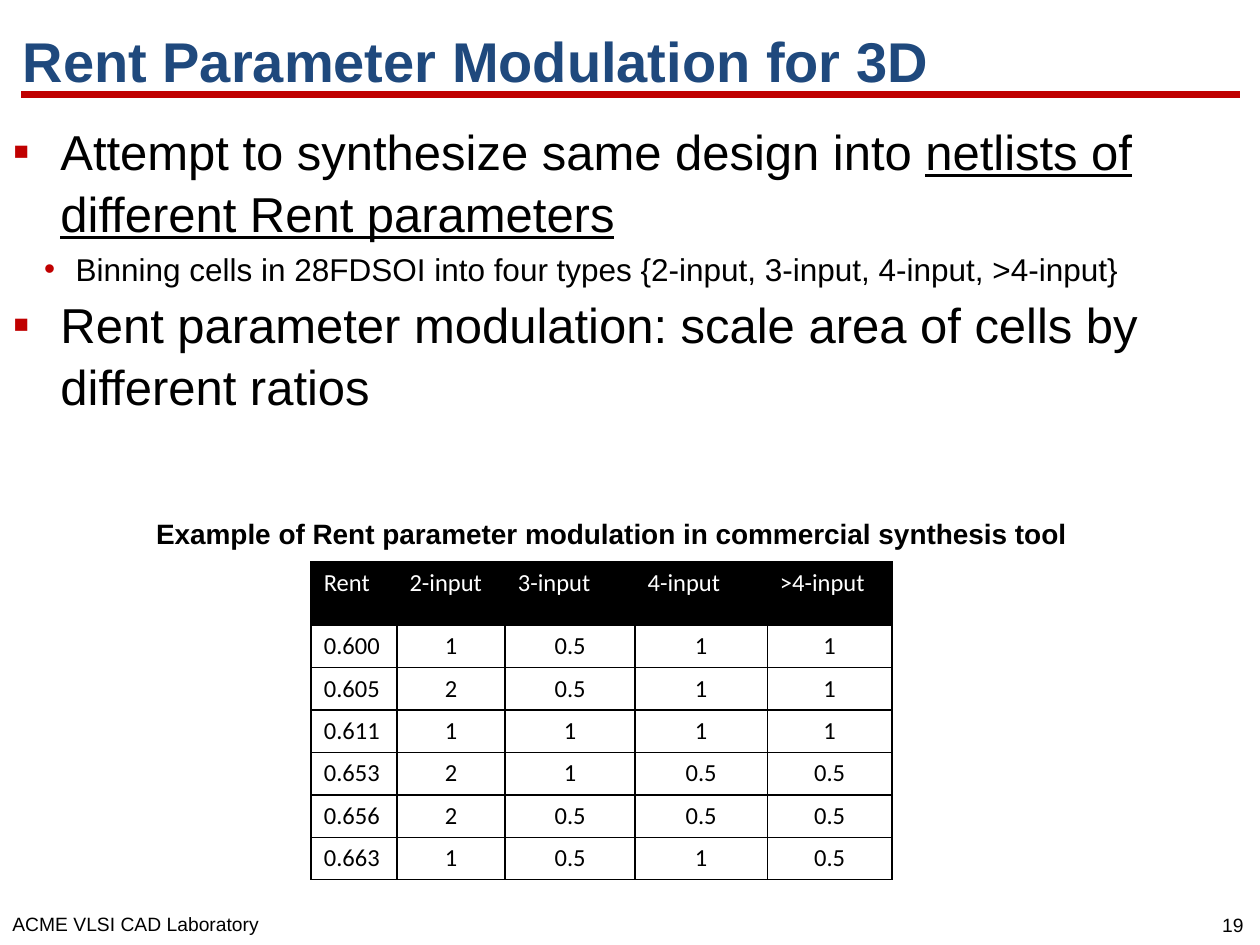
from dataclasses import dataclass

from lxml import etree
from pptx import Presentation
from pptx.dml.color import RGBColor
from pptx.enum.shapes import MSO_CONNECTOR
from pptx.enum.text import MSO_ANCHOR, MSO_AUTO_SIZE, PP_ALIGN
from pptx.oxml.ns import qn
from pptx.util import Inches, Pt

LEFT, CENTER = PP_ALIGN.LEFT, PP_ALIGN.CENTER
MIDDLE, TOP = MSO_ANCHOR.MIDDLE, MSO_ANCHOR.TOP
STRAIGHT = MSO_CONNECTOR.STRAIGHT
NO_FIT = MSO_AUTO_SIZE.NONE


@dataclass(frozen=True)
class Theme:
    font: str = "Arial"
    table_font: str = "Calibri"
    navy: str = "1F497D"
    red: str = "C00000"
    black: str = "000000"
    white: str = "FFFFFF"
    title_size: int = 32
    body_size: int = 28
    detail_size: int = 18
    caption_size: int = 16
    table_size: int = 14
    footer_size: int = 11


THEME = Theme()

# Each bullet: level, then (text, underlined) spans
BULLETS = [
    (0, [("Attempt to synthesize same design into ", False),
         ("netlists of different Rent parameters", True)]),
    (1, [("Binning cells in 28FDSOI into four types "
          "{2-input, 3-input, 4-input, >4-input}", False)]),
    (0, [("Rent parameter modulation: scale area of cells by different ratios",
          False)]),
]
# Each level: mark, indent in inches, text size, space before in points
LEVELS = [("▪", 0.38, THEME.body_size, 2),
          ("•", 0.25, THEME.detail_size, 3.6)]
LEVEL_MARGINS = [0.38, 0.5]

RENT_ROWS = [
    ("Rent", "2-input", "3-input", "4-input", ">4-input"),
    ("0.600", "1", "0.5", "1", "1"),
    ("0.605", "2", "0.5", "1", "1"),
    ("0.611", "1", "1", "1", "1"),
    ("0.653", "2", "1", "0.5", "0.5"),
    ("0.656", "2", "0.5", "0.5", "0.5"),
    ("0.663", "1", "0.5", "1", "0.5"),
]
COLUMN_WIDTHS = [0.68, 0.86, 1.03, 1.05, 0.99]
HEADER_HEIGHT, ROW_HEIGHT = 0.5, 0.29


def style(font, size, color, name=THEME.font, bold=False):
    font.name, font.size, font.bold = name, Pt(size), bold
    font.color.rgb = RGBColor.from_string(color)


def place(shape, box):
    shape.left, shape.top, shape.width, shape.height = map(Inches, box)


def add_label(page, box, text, size, align=LEFT, bold=False, wrap=True):
    frame = page.shapes.add_textbox(*map(Inches, box)).text_frame
    frame.word_wrap = wrap
    para = frame.paragraphs[0]
    para.text, para.alignment = text, align
    style(para.font, size, THEME.black, bold=bold)


def add_bullet_mark(para, level):
    mark, indent, _, _ = LEVELS[level]
    props = para._p.get_or_add_pPr()
    props.set("marL", str(Inches(LEVEL_MARGINS[level])))
    props.set("indent", str(-Inches(indent)))
    color = etree.SubElement(props, qn("a:buClr"))
    etree.SubElement(color, qn("a:srgbClr"), val=THEME.red)
    etree.SubElement(props, qn("a:buFont"), typeface=THEME.font)
    etree.SubElement(props, qn("a:buChar"), char=mark)


def fill_title(page, box):
    title = page.shapes.title
    place(title, box)
    frame = title.text_frame
    frame.text = "Rent Parameter Modulation for 3D"
    frame.vertical_anchor, frame.auto_size = MIDDLE, NO_FIT
    para = frame.paragraphs[0]
    para.alignment = LEFT
    style(para.font, THEME.title_size, THEME.navy, bold=True)


def add_title_rule(page, box):
    left, top, width, _ = box
    rule = page.shapes.add_connector(
        STRAIGHT, Inches(left), Inches(top), Inches(left + width), Inches(top))
    rule.line.color.rgb = RGBColor.from_string(THEME.red)
    rule.line.width = Pt(4.5)
    etree.SubElement(rule._element.spPr, qn("a:effectLst"))


def fill_body(page, box):
    body = page.placeholders[1]
    place(body, box)
    frame = body.text_frame
    frame.vertical_anchor, frame.auto_size = TOP, NO_FIT
    for index, (level, spans) in enumerate(BULLETS):
        para = frame.add_paragraph() if index else frame.paragraphs[0]
        _, _, size, space = LEVELS[level]
        para.level = level
        para.line_spacing, para.space_before = 1.05, Pt(space)
        add_bullet_mark(para, level)
        style(para.font, size, THEME.black)
        for text, underlined in spans:
            span = para.add_run()
            span.text = text
            if underlined:
                span.font.underline = True


def add_cell_borders(cell):
    props = cell._tc.get_or_add_tcPr()
    for index, side in enumerate(("a:lnL", "a:lnR", "a:lnT", "a:lnB")):
        line = etree.Element(qn(side), w=str(Pt(1)))
        fill = etree.SubElement(line, qn("a:solidFill"))
        etree.SubElement(fill, qn("a:srgbClr"), val=THEME.black)
        props.insert(index, line)


def add_rent_table(page, box):
    table = page.shapes.add_table(
        len(RENT_ROWS), len(COLUMN_WIDTHS), *map(Inches, box)).table
    for column, width in zip(table.columns, COLUMN_WIDTHS):
        column.width = Inches(width)
    for r, values in enumerate(RENT_ROWS):
        header = r == 0
        table.rows[r].height = Inches(HEADER_HEIGHT if header else ROW_HEIGHT)
        for c, value in enumerate(values):
            cell = table.cell(r, c)
            cell.text = value
            cell.fill.solid()
            cell.fill.fore_color.rgb = RGBColor.from_string(
                THEME.black if header else THEME.white)
            para = cell.text_frame.paragraphs[0]
            para.alignment = LEFT if header or c == 0 else CENTER
            style(para.font, THEME.table_size,
                  THEME.white if header else THEME.black, THEME.table_font)
            add_cell_borders(cell)


def add_footer(page, box):
    left, top, width, height = box
    add_label(page, (left, top, 2.94, height), "ACME VLSI CAD Laboratory",
              THEME.footer_size)
    add_label(page, (left + width - 0.39, top + 0.01, 0.39, height), "19",
              THEME.footer_size, align=CENTER, wrap=False)


def main():
    deck = Presentation()
    deck.slide_width, deck.slide_height = Inches(10), Inches(7.5)
    page = deck.slides.add_slide(deck.slide_layouts[1])

    # Heading
    add_title_rule(page, (0.17, 0.75, 9.67, 0))
    fill_title(page, (0.08, 0.17, 9.92, 0.62))

    # Bullets
    fill_body(page, (0, 0.89, 10, 2.38))

    # Table and its caption
    add_rent_table(page, (2.47, 4.46, 4.61, 2.5))
    add_label(page, (1.14, 4.05, 7.57, 0.37),
              "Example of Rent parameter modulation in commercial synthesis tool",
              THEME.caption_size, bold=True)

    # Footer
    add_footer(page, (0, 7.19, 9.98, 0.29))
    deck.save("out.pptx")


if __name__ == "__main__":
    main()
